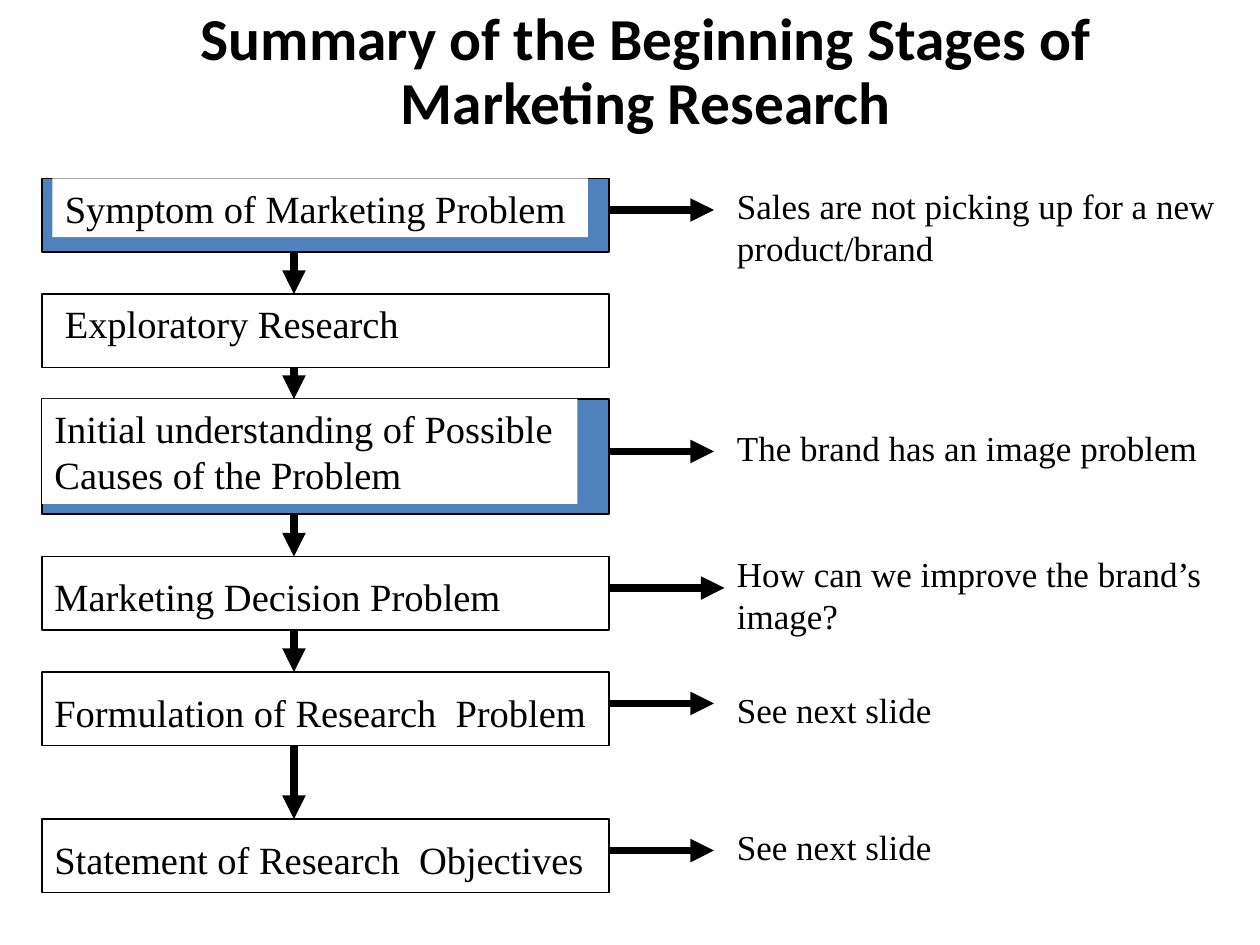
from dataclasses import dataclass
from itertools import pairwise
from typing import Any, Optional

from lxml import etree
from pptx import Presentation
from pptx.dml.color import RGBColor
from pptx.enum import shapes, text
from pptx.oxml.ns import qn
from pptx.util import Emu, Pt

PX = 7620
BLACK, WHITE, BLUE = "000000", "FFFFFF", "4F81BD"
BOX_X, BOX_W, DOWN_X, NOTE_X, NOTE_W = 40, 540, 280, 690, 510
FRAME = dict(word_wrap=True, auto_size=text.MSO_AUTO_SIZE.NONE)
TITLE = dict(name="Calibri", size=Pt(34), bold=True)
LABEL = dict(name="Times New Roman", size=Pt(22))
NOTE = dict(name="Times New Roman", size=Pt(20))


@dataclass
class Stage:
    y: int
    label: str
    label_y: int
    label_w: int
    label_x: int = BOX_X
    label_h: int = 56
    h: int = 70
    fill: str = WHITE
    note: Optional[str] = None
    note_y: int = 0
    note_h: int = 52
    arrow_x: int = 680


STAGES = [
    Stage(170, "Symptom of Marketing Problem", 170, 510, label_x=50, fill=BLUE,
          note="Sales are not picking up for a new product/brand",
          note_y=170, note_h=92),
    Stage(280, "Exploratory Research", 280, 410, label_x=50),
    Stage(380, "Initial understanding of Possible Causes of the Problem",
          380, 510, label_h=100, h=110, fill=BLUE,
          note="The brand has an image problem", note_y=400),
    Stage(530, "Marketing Decision Problem", 540, 510,
          note="How can we improve the brand’s image?",
          note_y=520, note_h=92, arrow_x=690),
    Stage(640, "Formulation of Research  Problem", 650, 550,
          note="See next slide", note_y=650),
    Stage(780, "Statement of Research  Objectives", 790, 540,
          note="See next slide", note_y=780),
]


def px(*values: int) -> list[Emu]:
    return [Emu(v * PX) for v in values]


def rgb(value: str) -> RGBColor:
    return RGBColor.from_string(value)


def apply(target: Any, values: dict[str, Any]) -> None:
    for name, value in values.items():
        setattr(target, name, value)


def write(sp: Any, content: str, font: dict[str, Any]) -> Any:
    tf = sp.text_frame
    apply(tf, FRAME)
    p = tf.paragraphs[0]
    r = p.add_run()
    r.text = content
    apply(r.font, font)
    r.font.color.rgb = rgb(BLACK)
    return p


def add_text(slide: Any, x: int, y: int, w: int, h: int, content: str,
             font: dict[str, Any], fill: Optional[str] = None) -> None:
    sp = slide.shapes.add_textbox(*px(x, y, w, h))
    if fill:
        sp.fill.solid()
        sp.fill.fore_color.rgb = rgb(fill)
    write(sp, content, font)


def add_stage(slide: Any, stage: Stage) -> None:
    sp = slide.shapes.add_shape(shapes.MSO_SHAPE.RECTANGLE,
                                *px(BOX_X, stage.y, BOX_W, stage.h))
    sp.shadow.inherit = False
    sp.fill.solid()
    sp.fill.fore_color.rgb = rgb(stage.fill)
    sp.line.color.rgb = rgb(BLACK)
    sp.line.width = Pt(1)
    add_text(slide, stage.label_x, stage.label_y, stage.label_w, stage.label_h,
             stage.label, LABEL, WHITE if stage.fill == BLUE else None)


def add_arrow(slide: Any, x1: int, y1: int, x2: int, y2: int) -> None:
    line = slide.shapes.add_connector(shapes.MSO_CONNECTOR.STRAIGHT,
                                      *px(x1, y1, x2, y2))
    line.line.color.rgb = rgb(BLACK)
    line.line.width = Pt(4.5)
    ln = line.line._get_or_add_ln()
    etree.SubElement(ln, qn("a:tailEnd"), type="triangle")
    etree.SubElement(line._element.spPr, qn("a:effectLst"))


def add_title(slide: Any, content: str) -> None:
    sp = slide.shapes.title
    apply(sp, dict(zip(("left", "top", "width", "height"), px(90, 0, 1050, 140))))
    p = write(sp, content, TITLE)
    apply(p, dict(alignment=text.PP_ALIGN.CENTER, line_spacing=0.9))
    sp.text_frame.vertical_anchor = text.MSO_ANCHOR.MIDDLE


def main() -> None:
    prs = Presentation()
    prs.slide_width, prs.slide_height = px(1200, 900)
    slide = prs.slides.add_slide(prs.slide_layouts[5])
    add_title(slide, "Summary of the Beginning Stages of Marketing Research")
    for stage in STAGES:
        add_stage(slide, stage)
    for upper, lower in pairwise(STAGES):
        add_arrow(slide, DOWN_X, upper.y + upper.h, DOWN_X, lower.y)
    for stage in STAGES:
        if stage.note:
            add_text(slide, NOTE_X, stage.note_y, NOTE_W, stage.note_h,
                     stage.note, NOTE)
            y = stage.y + stage.h // 2 - 5
            add_arrow(slide, BOX_X + BOX_W, y, stage.arrow_x, y)
    prs.save("out.pptx")


if __name__ == "__main__":
    main()
